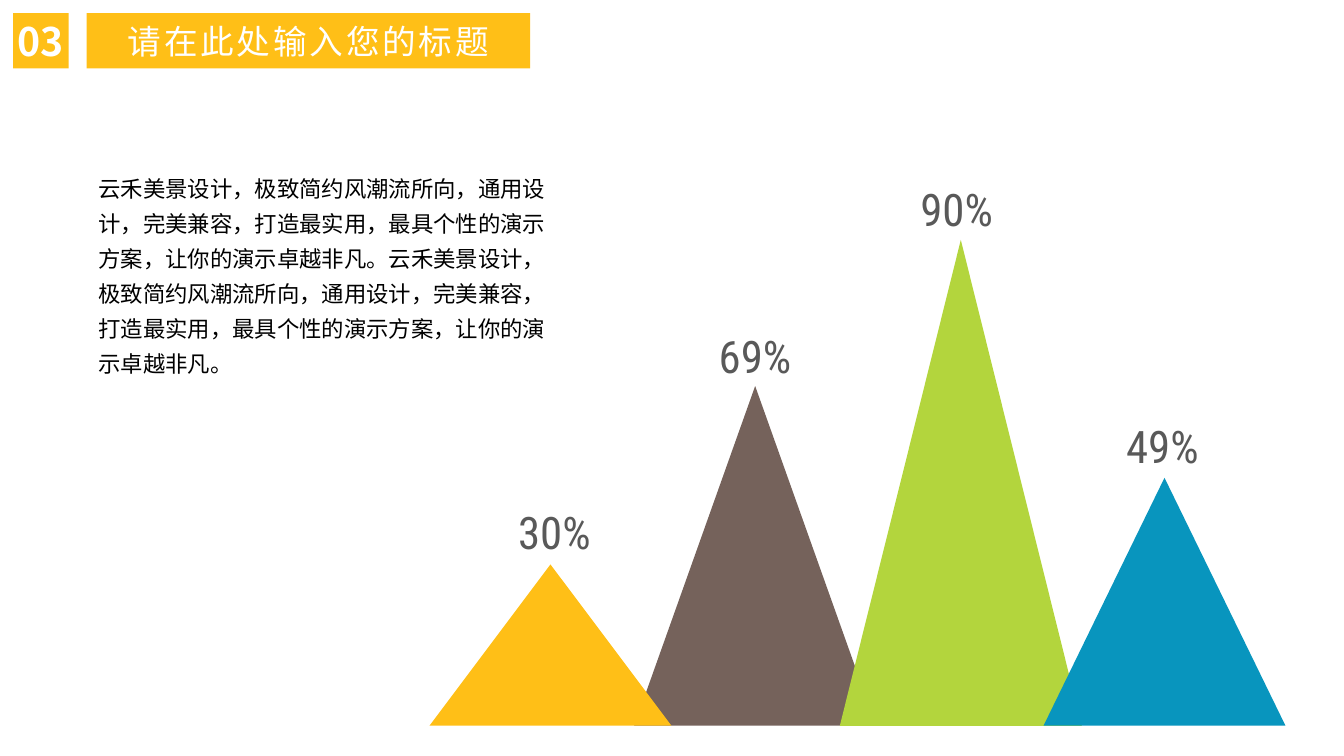
from dataclasses import dataclass

from lxml.etree import SubElement
from pptx import Presentation
from pptx.dml.color import RGBColor
from pptx.enum.shapes import MSO_SHAPE
from pptx.enum.text import MSO_ANCHOR, MSO_AUTO_SIZE, PP_ALIGN
from pptx.oxml.ns import qn
from pptx.shapes.autoshape import Shape
from pptx.slide import Slide
from pptx.util import Emu, Pt

EMU_PER_PX = 9144
BASELINE = 720
HALF_BASE = 120

AMBER = RGBColor(0xFF, 0xBF, 0x17)
BROWN = RGBColor(0x75, 0x62, 0x5B)
LIME = RGBColor(0xB3, 0xD5, 0x3D)
BLUE = RGBColor(0x08, 0x95, 0xBE)
GREY = RGBColor(0x59, 0x59, 0x59)
BLACK = RGBColor(0x00, 0x00, 0x00)
WHITE = RGBColor(0xFF, 0xFF, 0xFF)

CHINESE_FONT = "Noto Sans CJK SC"
NUMBER_FONT = "Roboto Condensed"
BODY_FONT = "Arial"

SENTENCE = "云禾美景设计，极致简约风潮流所向，通用设计，完美兼容，打造最实用，最具个性的演示方案，让你的演示卓越非凡。"


@dataclass(frozen=True)
class Area:
    """A rectangle on the slide in px."""

    left: int
    top: int
    width: int
    height: int

    def emu(self) -> tuple[Emu, ...]:
        """Return the rectangle in EMU."""
        return tuple(map(px, (self.left, self.top, self.width, self.height)))


@dataclass(frozen=True)
class Peak:
    """A triangle with its percentage label."""

    percent: int
    apex_x: int
    apex_y: int
    color: RGBColor
    label: Area


PEAKS = (
    Peak(69, 749, 383, BROWN, Area(703, 321, 100, 64)),
    Peak(30, 546, 560, AMBER, Area(504, 496, 99, 64)),
    Peak(90, 953, 238, LIME, Area(903, 175, 100, 64)),
    Peak(49, 1155, 474, BLUE, Area(1107, 410, 98, 64)),
)


def px(length: int) -> Emu:
    """Turn px into EMU."""
    return Emu(length * EMU_PER_PX)


def paint(shape: Shape, color: RGBColor) -> None:
    """Give a shape a plain fill without line or shadow."""
    shape.shadow.inherit = False
    shape.fill.solid()
    shape.fill.fore_color.rgb = color
    shape.line.fill.background()


def write(box: Shape, text: str, *, size: int, font: str, color: RGBColor,
          bold: bool = False, spacing: int = 0, wrap: bool = True,
          grow: bool = False, inset: int | None = None,
          anchor: MSO_ANCHOR = MSO_ANCHOR.MIDDLE,
          align: PP_ALIGN = PP_ALIGN.LEFT,
          line_spacing: float | None = None, gap: int | None = None) -> None:
    """Put one formatted paragraph into a shape."""
    frame = box.text_frame
    frame.word_wrap = wrap
    frame.vertical_anchor = anchor
    if grow:
        frame.auto_size = MSO_AUTO_SIZE.SHAPE_TO_FIT_TEXT
    if inset is not None:
        frame.margin_left = frame.margin_right = px(inset)
        frame.margin_top = frame.margin_bottom = px(inset)
    para = frame.paragraphs[0]
    para.alignment = align
    if line_spacing is not None:
        para.line_spacing = line_spacing
    if gap is not None:
        para.space_before = para.space_after = Pt(gap)
    span = para.add_run()
    span.text = text
    span.font.size = Pt(size)
    span.font.name = font
    span.font.bold = bold
    span.font.color.rgb = color
    properties = span.font._element
    SubElement(properties, qn("a:ea")).set("typeface", CHINESE_FONT)
    if spacing:
        properties.set("spc", str(spacing * 100))


def draw_peak(page: Slide, peak: Peak) -> None:
    """Draw the triangle of a peak."""
    builder = page.shapes.build_freeform(peak.apex_x, peak.apex_y, scale=EMU_PER_PX)
    builder.add_line_segments([
        (peak.apex_x + HALF_BASE, BASELINE),
        (peak.apex_x - HALF_BASE, BASELINE),
    ], close=True)
    paint(builder.convert_to_shape(), peak.color)


def draw_label(page: Slide, peak: Peak) -> None:
    """Write the percentage above a peak."""
    box = page.shapes.add_textbox(*peak.label.emu())
    write(box, f"{peak.percent}%", size=32, font=NUMBER_FONT, color=GREY,
          wrap=False, grow=True, anchor=MSO_ANCHOR.TOP)


def draw_banner(page: Slide, area: Area) -> Shape:
    """Draw an amber rectangle of the heading."""
    banner = page.shapes.add_shape(MSO_SHAPE.RECTANGLE, *area.emu())
    paint(banner, AMBER)
    return banner


def main() -> None:
    """Build and save the slide."""
    deck = Presentation()
    deck.slide_width, deck.slide_height = px(1333), px(750)
    page = deck.slides.add_slide(deck.slide_layouts[6])
    for peak in PEAKS:
        draw_peak(page, peak)
    for peak in PEAKS:
        draw_label(page, peak)
    body = page.shapes.add_textbox(*Area(88, 160, 464, 220).emu())
    write(body, SENTENCE * 2, size=16, font=BODY_FONT, color=BLACK, grow=True,
          line_spacing=1.3, gap=6)
    number = draw_banner(page, Area(13, 13, 55, 55))
    write(number, "03", size=28, font=CHINESE_FONT, color=WHITE, bold=True,
          inset=0, align=PP_ALIGN.CENTER)
    title = draw_banner(page, Area(86, 13, 440, 55))
    write(title, "请在此处输入您的标题", size=24, font=CHINESE_FONT, color=WHITE,
          spacing=2, align=PP_ALIGN.CENTER)
    deck.save("out.pptx")


if __name__ == "__main__":
    main()
